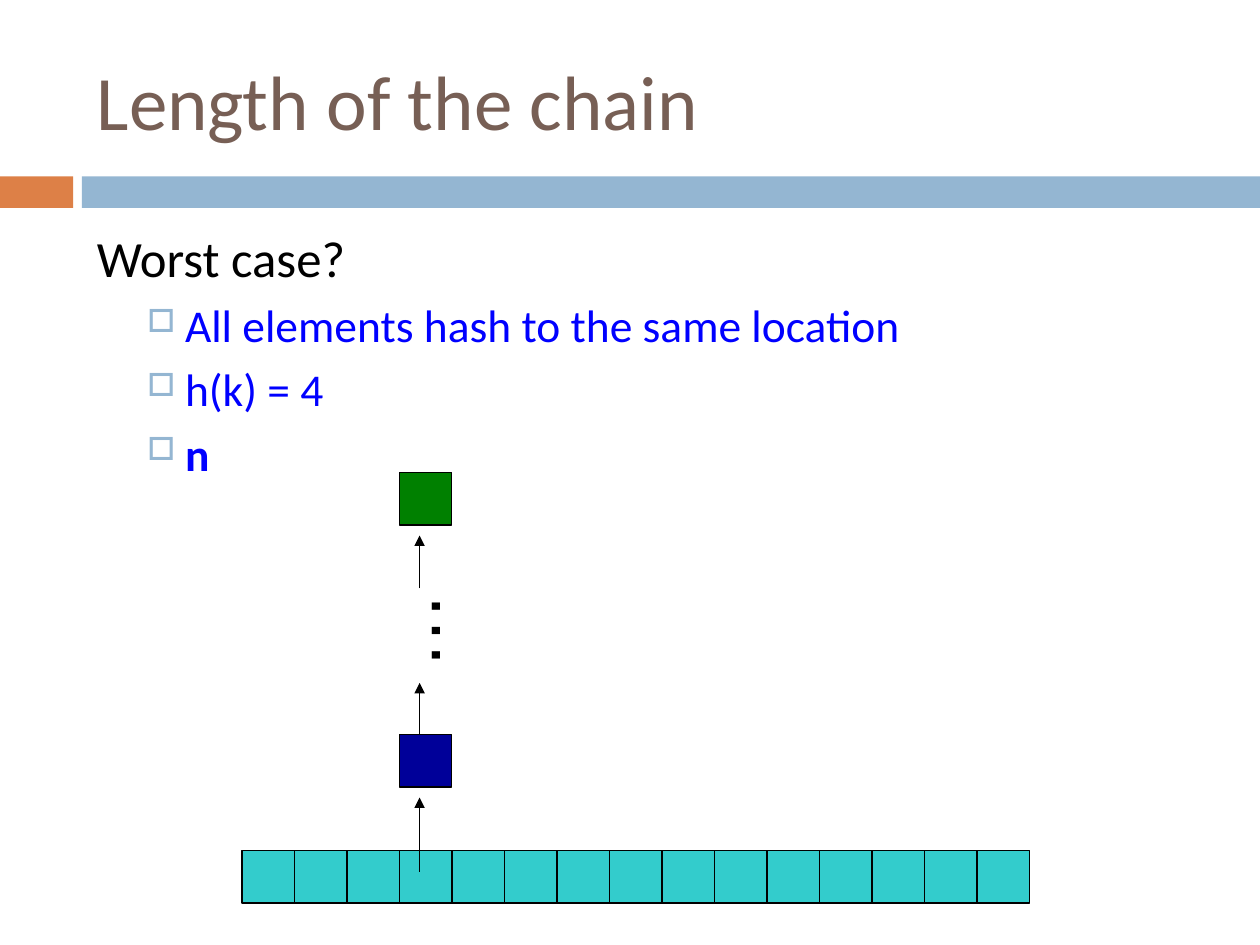
from lxml.etree import SubElement
from pptx import Presentation
from pptx.dml.color import RGBColor
from pptx.enum.shapes import MSO_CONNECTOR, MSO_SHAPE
from pptx.enum.text import MSO_ANCHOR
from pptx.oxml.ns import qn
from pptx.util import Inches, Pt

COLORS = {
    "title": "775F55", "accent": "DD8047", "band": "94B6D2", "ink": "000000",
    "answer": "0000FF", "table": "33CCCC", "first": "000099", "last": "008000",
}
TITLE = "Length of the chain"
QUESTION = "Worst case?"
ANSWERS = ["All elements hash to the same location", "h(k) = 4", "n"]

SLOT_COUNT, USED_SLOT = 15, 3
TABLE_LEFT, TABLE_TOP, TABLE_WIDTH = 1.92, 6.75, 6.25
SLOT = TABLE_WIDTH / SLOT_COUNT
NODE_LEFT = TABLE_LEFT + USED_SLOT * SLOT
NODES = [("first", 5.83), ("last", 3.75)]
ARROW_X = 3.33
ARROWS = [(6.92, 6.33), (5.83, 5.42), (4.67, 4.25)]  # start and end heights


def rgb(name):
    return RGBColor.from_string(COLORS[name])


def add_box(shapes, left, top, width, height, fill, outlined=True):
    box = shapes.add_shape(MSO_SHAPE.RECTANGLE, Inches(left), Inches(top),
                           Inches(width), Inches(height))
    box.shadow.inherit = False
    box.fill.solid()
    box.fill.fore_color.rgb = rgb(fill)
    if outlined:
        box.line.color.rgb = rgb("ink")
        box.line.width = Pt(0.75)
    else:
        box.line.fill.background()


def add_vertical(shapes, x, start, end, arrow=False):
    line = shapes.add_connector(MSO_CONNECTOR.STRAIGHT, Inches(x), Inches(start),
                                Inches(x), Inches(end))
    line.line.color.rgb = rgb("ink")
    line.line.width = Pt(0.75)
    if arrow:
        SubElement(line.line._get_or_add_ln(), qn("a:tailEnd"), type="triangle")
    SubElement(line._element.spPr, qn("a:effectLst"))


def add_text_box(shapes, left, top, width, height):
    box = shapes.add_textbox(Inches(left), Inches(top), Inches(width), Inches(height))
    box.text_frame.word_wrap = True
    return box


def write(paragraph, text, size, color, font="Calibri", before=0):
    paragraph.text = text
    paragraph.space_before = Pt(before)
    style = paragraph.runs[0].font
    style.size, style.name = Pt(size), font
    style.color.rgb = rgb(color)


def add_bullet(paragraph):
    properties = paragraph._p.get_or_add_pPr()
    properties.set("marL", str(Inches(0.7)))
    properties.set("indent", str(Inches(-0.3)))
    color = SubElement(properties, qn("a:buClr"))
    SubElement(color, qn("a:srgbClr"), val=COLORS["band"])
    SubElement(properties, qn("a:buSzPct"), val="70000")
    SubElement(properties, qn("a:buChar"), char="□")


def main():
    deck = Presentation()
    deck.slide_width, deck.slide_height = Inches(10), Inches(7.5)
    shapes = deck.slides.add_slide(deck.slide_layouts[6]).shapes

    add_box(shapes, 0, 1.4, 0.58, 0.25, "accent", outlined=False)
    add_box(shapes, 0.65, 1.4, 9.35, 0.25, "band", outlined=False)

    title = add_text_box(shapes, 0.67, 0.25, 8.92, 1.08).text_frame
    title.vertical_anchor = MSO_ANCHOR.MIDDLE
    write(title.paragraphs[0], TITLE, 44, "title")

    body = add_text_box(shapes, 0.67, 1.75, 8.92, 4.92).text_frame
    write(body.paragraphs[0], QUESTION, 29, "ink", before=7)
    for answer in ANSWERS:
        paragraph = body.add_paragraph()
        paragraph.level = 1
        write(paragraph, answer, 26, "answer", before=5.5)
        add_bullet(paragraph)
    body.paragraphs[-1].runs[0].font.bold = True

    hash_table = shapes.add_group_shape().shapes
    add_box(hash_table, TABLE_LEFT, TABLE_TOP, TABLE_WIDTH, SLOT, "table")
    for slot in range(1, SLOT_COUNT):
        add_vertical(hash_table, TABLE_LEFT + slot * SLOT, TABLE_TOP, TABLE_TOP + SLOT)

    for color, top in NODES:
        add_box(shapes, NODE_LEFT, top, SLOT, SLOT, color)
    for start, end in ARROWS:
        add_vertical(shapes, ARROW_X, start, end, arrow=True)

    ellipsis = add_text_box(shapes, 2.75, 4.5, 1, 0.83)
    ellipsis.rotation = 270
    write(ellipsis.text_frame.paragraphs[0], "…", 44, "ink", font="Arial")

    deck.save("out.pptx")


if __name__ == "__main__":
    main()
